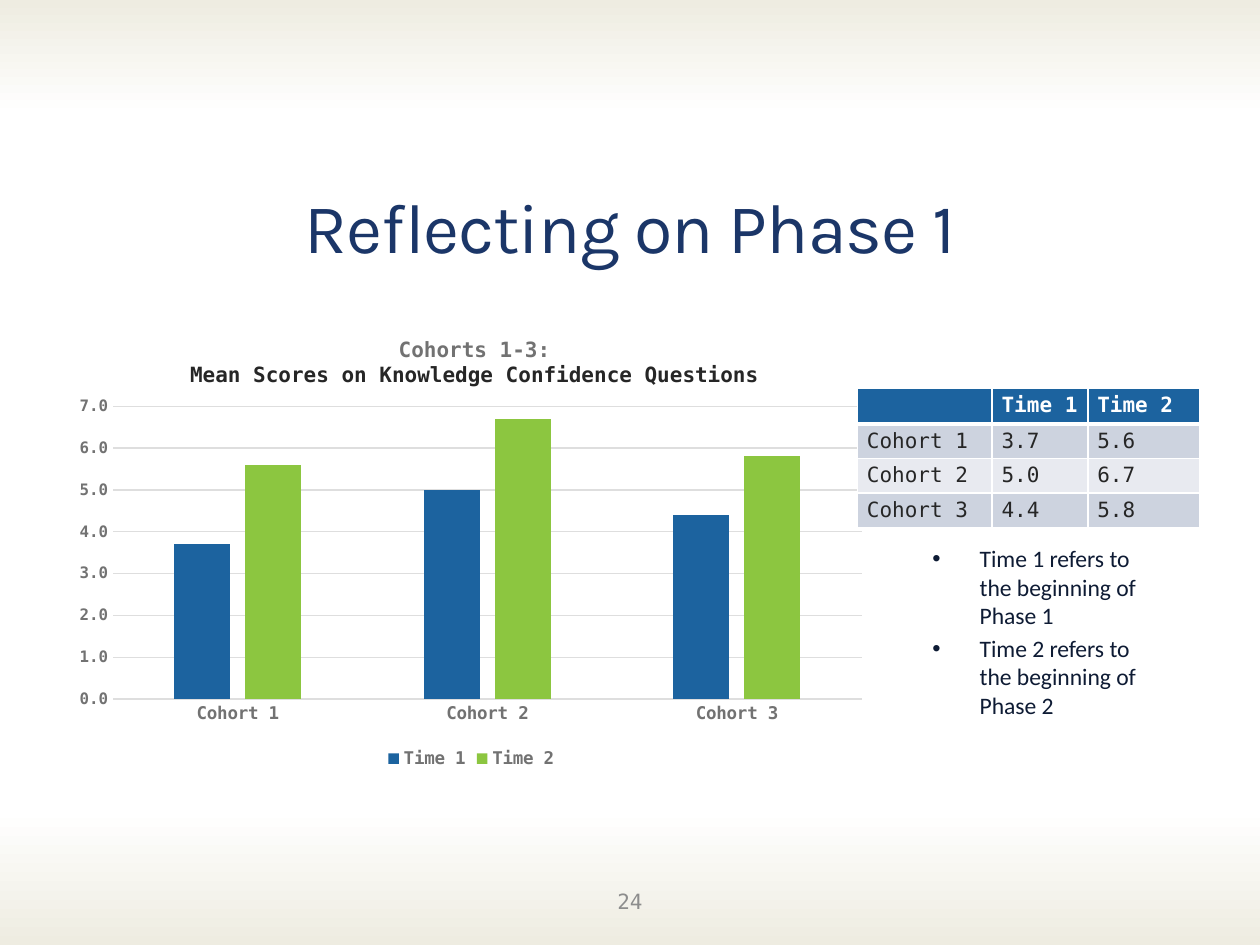
"""Build the slide on Phase 1 scores with a chart, a table and notes on timing."""
from dataclasses import dataclass

from lxml.etree import SubElement
from pptx import Presentation
from pptx.chart.data import CategoryChartData as ChartData
from pptx.dml.color import RGBColor as RGB
from pptx.enum.chart import XL_CHART_TYPE as Kind, XL_LEGEND_POSITION as Spot, XL_TICK_MARK as Tick
from pptx.enum.shapes import MSO_SHAPE as Shape
from pptx.enum.text import MSO_ANCHOR as Anchor, MSO_AUTO_SIZE as Fit, PP_ALIGN as Align
from pptx.oxml.ns import qn
from pptx.util import Pt


@dataclass(frozen=True)
class Theme:
    navy: str = "1B3668"
    ink: str = "0E1B34"
    dark: str = "262626"
    grey: str = "727272"
    pale: str = "8D8D8D"
    rule: str = "DEDEDE"
    sand: str = "EEECE1"
    white: str = "FFFFFF"
    blue: str = "1C639F"
    green: str = "8CC640"
    bands: tuple = ("CDD3DF", "E8EAF0")
    head: str = "Karla"
    body: str = "Calibri"
    mono: str = "DejaVu Sans Mono"
    large: float = 40
    note: float = 13.5
    text: float = 12
    label: float = 10
    small: float = 9


THEME = Theme()
GROUPS = ("Cohort 1", "Cohort 2", "Cohort 3")
SCORES = {"Time 1": (3.7, 5.0, 4.4), "Time 2": (5.6, 6.7, 5.8)}


def style(font, size=THEME.text, color=THEME.dark, face=THEME.mono, bold=False):
    font.size, font.name, font.bold = Pt(size), face, bold
    font.color.rgb = RGB.from_string(color)


def write(frame, text, more=False, align=None, space=None, track=None, **form):
    para = frame.add_paragraph() if more else frame.paragraphs[0]
    if align is not None:
        para.alignment = align
    if space is not None:
        para.space_before = Pt(space)
    if not text:
        SubElement(para._p, qn("a:endParaRPr"), sz=str(int(THEME.text * 100)))
        return
    run = para.add_run()
    run.text = text
    style(run.font, **form)
    if track is not None:
        run.font._element.set("spc", str(int(track * 100)))


def place(shape, left, top, width, height):
    shape.left, shape.top, shape.width, shape.height = map(Pt, (left, top, width, height))
    shape.text_frame.word_wrap = True
    shape.text_frame.auto_size = Fit.NONE
    return shape.text_frame


def add_fade(slide, top, height, turn=0):
    band = slide.shapes.add_shape(Shape.RECTANGLE, 0, Pt(top), Pt(720), Pt(height))
    band.rotation = turn
    band.shadow.inherit = False
    band.line.fill.background()
    band.fill.gradient()
    band.fill.gradient_angle = 270
    for stop, color in zip(band.fill.gradient_stops, (THEME.sand, THEME.white)):
        stop.color.rgb = RGB.from_string(color)


def add_title(slide, text):
    frame = place(slide.shapes.title, 36, 84, 648, 90)
    frame.vertical_anchor = Anchor.MIDDLE
    write(frame, text, align=Align.CENTER, size=THEME.large, color=THEME.navy,
          face=THEME.head, track=-0.5)


def add_list(slide, items):
    frame = place(slide.placeholders[1], 525.6, 307.4, 147, 71.3)
    for i, item in enumerate(items):
        write(frame, item, more=i > 0, space=None if i else 0,
              size=THEME.note, color=THEME.ink, face=THEME.body)


def set_layout(host, **parts):
    node = host.find(qn("c:layout"))
    if node is None:
        node = SubElement(host, qn("c:layout"))
        host.insert(0, node)
    box = SubElement(node, qn("c:manualLayout"))
    if "w" in parts:
        SubElement(box, qn("c:layoutTarget"), val="inner")
    for axis in "xy":
        SubElement(box, qn(f"c:{axis}Mode"), val="edge")
    for key, val in parts.items():
        SubElement(box, qn(f"c:{key}"), val=str(val))


def set_line(line):
    line.color.rgb = RGB.from_string(THEME.rule)
    line.width = Pt(0.75)


def add_axes(chart):
    base, scale = chart.category_axis, chart.value_axis
    for axis, size in ((base, THEME.label), (scale, THEME.small)):
        axis.major_tick_mark = axis.minor_tick_mark = Tick.NONE
        style(axis.tick_labels.font, size=size, color=THEME.grey, bold=True)
    set_line(base.format.line)
    scale.format.line.fill.background()
    set_line(scale.major_gridlines.format.line)
    scale.minimum_scale, scale.maximum_scale, scale.major_unit = 0, 7, 1
    scale.tick_labels.number_format = "0.0"
    scale.tick_labels.number_format_is_linked = False


def add_bars(slide):
    data = ChartData(number_format="0.0")
    data.categories = GROUPS
    for name, vals in SCORES.items():
        data.add_series(name, vals)
    chart = slide.shapes.add_chart(Kind.COLUMN_CLUSTERED, Pt(36.7), Pt(176.4),
                                   Pt(465.1), Pt(265.7), data).chart
    style(chart.font, size=THEME.label)
    chart.has_title = True
    frame = chart.chart_title.text_frame
    write(frame, "Cohorts 1-3:", align=Align.CENTER, color=THEME.grey, bold=True)
    write(frame, "Mean Scores on Knowledge Confidence Questions", more=True,
          align=Align.CENTER, bold=True)
    set_layout(chart.chart_title._element, x=0.15, y=0.05)
    set_layout(chart._chartSpace.chart.plotArea, x=0.06, y=0.21, w=0.92, h=0.63)
    chart.has_legend = True
    chart.legend.position = Spot.BOTTOM
    chart.legend.include_in_layout = False
    style(chart.legend.font, size=THEME.label, color=THEME.grey, bold=True)
    add_axes(chart)
    plot = chart.plots[0]
    plot.gap_width, plot.overlap, plot.vary_by_categories = 219, -27, False
    for bars, color in zip(plot.series, (THEME.blue, THEME.green)):
        bars.format.fill.solid()
        bars.format.fill.fore_color.rgb = RGB.from_string(color)


def set_edge(cell, side, width):
    edge = SubElement(cell._tc.get_or_add_tcPr(), qn(f"a:ln{side}"), w=str(Pt(width)))
    SubElement(SubElement(edge, qn("a:solidFill")), qn("a:srgbClr"), val=THEME.white)


def fill_cell(cell, text, row):
    cell.margin_left = cell.margin_right = Pt(5.4)
    cell.margin_top = cell.margin_bottom = Pt(2.8)
    for side, width in zip("LRTB", (1, 1, 3 if row == 1 else 1, 1 if row else 3)):
        set_edge(cell, side, width)
    cell.fill.solid()
    shade = THEME.bands[(row - 1) % 2] if row else THEME.blue
    cell.fill.fore_color.rgb = RGB.from_string(shade)
    write(cell.text_frame, text, color=THEME.dark if row else THEME.white, bold=not row)


def add_grid(slide):
    rows = [("", *SCORES)]
    rows += [(name, *(f"{val:.1f}" for val in vals))
             for name, *vals in zip(GROUPS, *SCORES.values())]
    widths = (77, 54.7, 64)
    grid = slide.shapes.add_table(len(rows), len(widths), Pt(490), Pt(222),
                                  Pt(sum(widths)), Pt(79.2)).table
    for col, width in zip(grid.columns, widths):
        col.width = Pt(width)
    for r, row in enumerate(rows):
        for c, text in enumerate(row):
            fill_cell(grid.cell(r, c), text, r)


def add_number(slide, text):
    frame = place(slide.shapes.add_textbox(0, 0, 0, 0), 276, 500.4, 168, 28.8)
    frame.vertical_anchor = Anchor.MIDDLE
    write(frame, text, align=Align.CENTER, color=THEME.pale)


def main():
    deck = Presentation()
    deck.slide_width, deck.slide_height = Pt(720), Pt(540)
    slide = deck.slides.add_slide(deck.slide_layouts[1])
    add_fade(slide, 462.2, 77.8, turn=180)
    add_fade(slide, 0, 66.2)
    add_title(slide, "Reflecting on Phase 1")
    add_list(slide, ("Time 1 refers to the beginning of Phase 1",
                     "Time 2 refers to the beginning of Phase 2"))
    add_bars(slide)
    add_number(slide, "24")
    add_grid(slide)
    deck.save("out.pptx")


if __name__ == "__main__":
    main()
